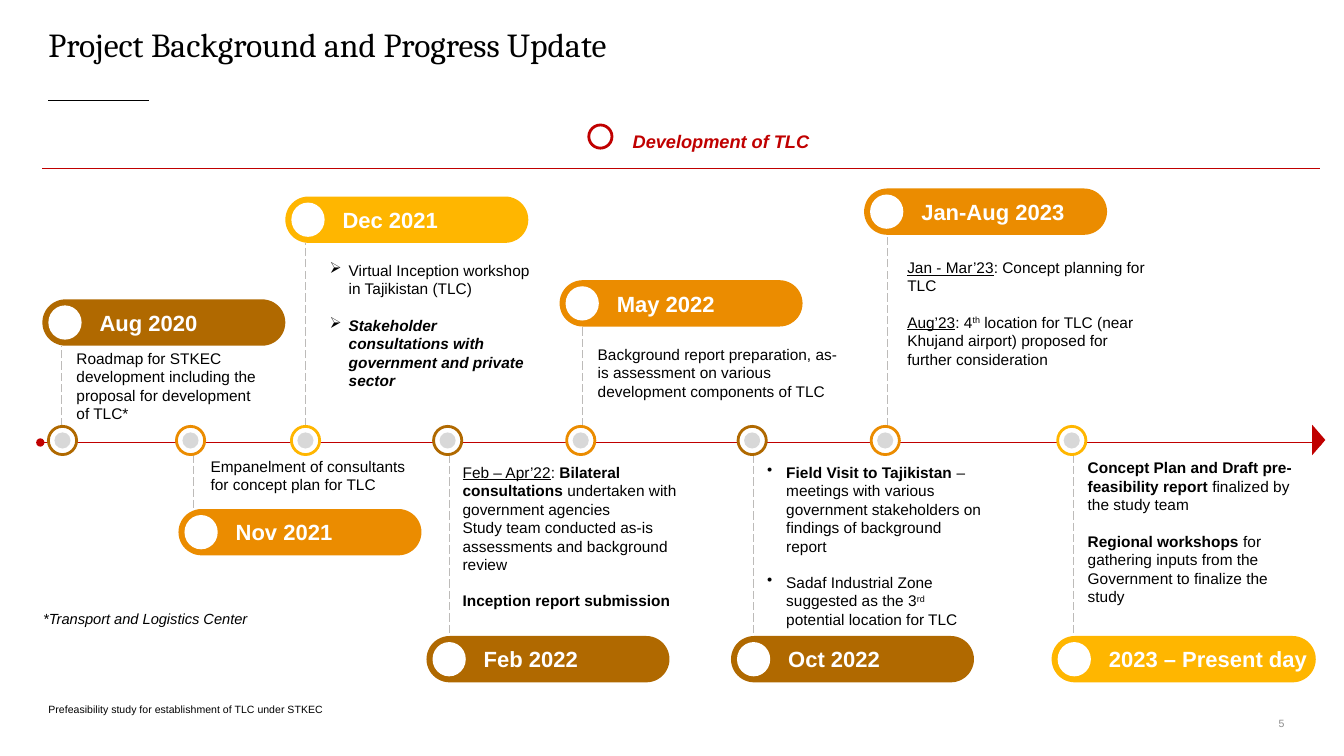
"""Builds the project timeline slide."""
from lxml import etree
from pptx import Presentation
from pptx.dml.color import RGBColor
from pptx.enum.dml import MSO_LINE
from pptx.enum.shapes import MSO_CONNECTOR, MSO_SHAPE
from pptx.enum.text import MSO_ANCHOR, PP_ALIGN
from pptx.oxml.ns import qn
from pptx.util import Inches, Pt

PILL, DISC, TRIANGLE = MSO_SHAPE.ROUNDED_RECTANGLE, MSO_SHAPE.OVAL, MSO_SHAPE.ISOSCELES_TRIANGLE
STRAIGHT, DASHED = MSO_CONNECTOR.STRAIGHT, MSO_LINE.LONG_DASH
TOP, MIDDLE, BOTTOM = MSO_ANCHOR.TOP, MSO_ANCHOR.MIDDLE, MSO_ANCHOR.BOTTOM
LEFT, CENTER, RIGHT = PP_ALIGN.LEFT, PP_ALIGN.CENTER, PP_ALIGN.RIGHT

BLACK = RGBColor(0x00, 0x00, 0x00)
WHITE = RGBColor(0xFF, 0xFF, 0xFF)
BROWN = RGBColor(0xB0, 0x69, 0x00)
ORANGE = RGBColor(0xEB, 0x8C, 0x00)
YELLOW = RGBColor(0xFF, 0xB6, 0x00)
RED = RGBColor(0xC0, 0x00, 0x00)
STEM_GREY = RGBColor(0xBD, 0xBB, 0xB9)
CORE_GREY = RGBColor(0xD8, 0xD8, 0xD8)
NUMBER_GREY = RGBColor(0x8C, 0x8C, 0x8C)

COLUMNS, ROWS = 133.3, 75
AXIS_ROW, MARKER_ROW = 43.9, 42.3
PILL_WIDTH, PILL_HEIGHT, MARKER_SIZE = 24.1, 4.6, 2.8

# label, colour, (pill column, row, width), marker column, stem column
EVENTS = [
    ("Aug 2020", BROWN, (4.2, 29.7, PILL_WIDTH), 4.8, 6.1),
    ("Nov 2021", ORANGE, (17.7, 50.5, PILL_WIDTH), 17.5, 19.2),
    ("Dec 2021", YELLOW, (28.3, 19.5, PILL_WIDTH), 28.9, 30.3),
    ("Feb 2022", BROWN, (42.3, 63.1, PILL_WIDTH), 43, 44.6),
    ("May 2022", ORANGE, (55.5, 27.8, PILL_WIDTH), 56.2, 57.8),
    ("Oct 2022", BROWN, (72.5, 63.1, PILL_WIDTH), 73.2, 74.7),
    ("Jan-Aug 2023", ORANGE, (85.7, 18.7, PILL_WIDTH), 86.4, 88),
    ("2023 – Present day", YELLOW, (104.3, 63.1, 26.2), 104.9, 106.5),
]

# place, bullet, paragraphs of (gap before, spans of (text, style letters))
NOTES = [
    ((6.6, 34.6, 20.9, 8.2), None, [
        (0, [("Roadmap for STKEC development including the proposal for development of TLC*", "")])]),
    ((19.9, 45.3, 21.7, 6.9), None, [
        (0, [("Empanelment of consultants for concept plan for TLC", "")])]),
    ((31.7, 25.9, 22.1, 16.6), "➢", [
        (0, [("Virtual Inception workshop in Tajikistan (TLC)", "")]),
        (1, [("Stakeholder consultations with government and private sector", "bi")])]),
    ((44.9, 45.9, 23.3, 15.4), None, [
        (0, [("Feb – Apr’22", "u"), (":", ""), (" Bilateral consultations ", "b"),
             ("undertaken with government agencies", "")]),
        (0, [("Study team conducted as-is assessments and background review", "")]),
        (1, [("Inception report submission", "b")])]),
    ((58.3, 34.2, 26.1, 8.4), None, [
        (0, [("Background report preparation, as-is assessment on various "
              "development components of TLC", "")])]),
    ((75.1, 45.9, 23.3, 15.4), "•", [
        (0, [("Field Visit to Tajikistan ", "b"),
             ("– meetings with various government stakeholders on findings of background report", "")]),
        (1, [("Sadaf Industrial Zone suggested as the 3", ""), ("rd", "^"),
             (" potential location for TLC", "")])]),
    ((89, 25.6, 26.2, 16.1), None, [
        (0, [("Jan - Mar’23", "u"), (": Concept planning for TLC", "")]),
        (1, [("Aug’23", "u"), (": 4", ""), ("th", "^"),
             (" location for TLC (near Khujand airport) proposed for further consideration", "")])]),
    ((106.9, 45.5, 23, 17), None, [
        (0, [("Concept Plan and Draft pre-feasibility report ", "b"), ("finalized by the study team", "")]),
        (1, [("Regional workshops ", "b"),
             ("for gathering inputs from the Government to finalize the study", "")])]),
]


class TimelinePage:
    """Holds the text style and the current slide, measured on a grid of tenths of an inch."""

    font_name = "Arial"
    note_size = 11
    note_gap = Pt(12.65)

    def __init__(self, deck):
        deck.slide_width, deck.slide_height = self.grid(COLUMNS, ROWS)
        self.page = deck.slides.add_slide(deck.slide_layouts[6])

    def grid(self, *cells):
        return [Inches(cell / 10) for cell in cells]

    def style(self, font, size, color, letters="", name=None):
        font.name, font.size = name or self.font_name, Pt(size)
        font.color.rgb = color
        font.bold, font.italic, font.underline = "b" in letters, "i" in letters, "u" in letters

    def frame(self, shape, anchor, insets):
        frame = shape.text_frame
        frame.word_wrap, frame.vertical_anchor = True, anchor
        (frame.margin_left, frame.margin_top,
         frame.margin_right, frame.margin_bottom) = self.grid(*insets)
        return frame

    def shape(self, kind, place, fill, outline=None):
        shape = self.page.shapes.add_shape(kind, *self.grid(*place))
        shape.shadow.inherit = False
        shape.fill.solid()
        shape.fill.fore_color.rgb = fill
        if outline is None:
            shape.line.fill.background()
        else:
            shape.line.color.rgb, shape.line.width = outline, Pt(2)
        return shape

    def line(self, start, end, color, width=0.75, dash=None, dots=False):
        line = self.page.shapes.add_connector(STRAIGHT, *self.grid(*start, *end))
        line.line.color.rgb, line.line.width = color, Pt(width)
        if dash is not None:
            line.line.dash_style = dash
        if dots:
            outline = line.line._get_or_add_ln()
            for tip in ("a:headEnd", "a:tailEnd"):
                etree.SubElement(outline, qn(tip), type="oval")
        etree.SubElement(line._element.spPr, qn("a:effectLst"))

    def label(self, text, place, size, color=BLACK, letters="", anchor=TOP,
              align=LEFT, insets=(0, 0, 0, 0), name=None, spacing=None):
        box = self.page.shapes.add_textbox(*self.grid(*place))
        frame = self.frame(box, anchor, insets)
        frame.text = text
        para = frame.paragraphs[0]
        para.alignment, para.line_spacing = align, spacing
        self.style(para.runs[0].font, size, color, letters, name)

    def bullet(self, para, mark):
        properties = para._p.get_or_add_pPr()
        indent = Inches(0.19)
        properties.set("marL", str(indent))
        properties.set("indent", str(-indent))
        tint = etree.SubElement(properties, qn("a:buClr"))
        etree.SubElement(tint, qn("a:srgbClr"), val=str(BLACK))
        etree.SubElement(properties, qn("a:buChar"), char=mark)

    def note(self, place, mark, paragraphs):
        box = self.page.shapes.add_textbox(*self.grid(*place))
        frame = self.frame(box, TOP, (1, 0, 1, 0))
        for index, (gap, spans) in enumerate(paragraphs):
            para = frame.add_paragraph() if index else frame.paragraphs[0]
            if mark:
                self.bullet(para, mark)
            if gap:
                para.space_before = self.note_gap
            for text, letters in spans:
                span = para.add_run()
                span.text = text
                self.style(span.font, self.note_size, BLACK, letters)
                if "^" in letters:
                    span._r.get_or_add_rPr().set("baseline", "30000")

    def event(self, text, color, pill_place, marker_column, stem_column):
        column, row, width = pill_place
        above = row < AXIS_ROW
        stem_start = MARKER_ROW if above else MARKER_ROW + MARKER_SIZE
        stem_end = row + PILL_HEIGHT if above else row
        self.line((stem_column, stem_start), (stem_column, stem_end), STEM_GREY, dash=DASHED)
        pill = self.shape(PILL, (column, row, width, PILL_HEIGHT), color)
        pill.adjustments[0] = 0.5
        frame = self.frame(pill, MIDDLE, (5, 0, 0, 0))
        frame.text = text
        frame.paragraphs[0].alignment = LEFT
        self.style(frame.paragraphs[0].runs[0].font, 15.7, WHITE, "b")
        self.shape(DISC, (column + 0.6, row + 0.6, 3.3, 3.4), WHITE)
        self.shape(DISC, (marker_column, MARKER_ROW, MARKER_SIZE, MARKER_SIZE), WHITE, color)
        self.shape(DISC, (marker_column + 0.6, MARKER_ROW + 0.6, 1.6, 1.6), CORE_GREY)


def main():
    deck = Presentation()
    timeline = TimelinePage(deck)
    timeline.label("Project Background and Progress Update", (4.8, 1.3, 123.6, 6.7), 24,
                   anchor=MIDDLE, name="Cambria", spacing=0.85)
    timeline.line((4.8, 10), (14.8, 10), BLACK, width=1)
    timeline.line((4.2, 16.7), (130.9, 16.7), RED)
    timeline.label("Development of TLC", (20.2, 12.5, 102.6, 3), 13, RED, "bi",
                   MIDDLE, CENTER, (1, 1, 1, 1))
    timeline.shape(DISC, (58.4, 12.4, 2.3, 2.3), WHITE, RED)
    timeline.line((4, AXIS_ROW), (130.7, AXIS_ROW), RED, dots=True)
    for event in EVENTS:
        timeline.event(*event)
    for note in NOTES:
        timeline.note(*note)
    timeline.shape(TRIANGLE, (129.3, 43, 3, 1.3), RED).rotation = 90
    timeline.label("*Transport and Logistics Center", (3.3, 60.5, 42.3, 2.1), 10.5,
                   letters="i", insets=(1, 0, 1, 0))
    timeline.label("Prefeasibility study for establishment of TLC under STKEC",
                   (4.8, 69.5, 59.9, 1.5), 7.5, anchor=BOTTOM)
    timeline.label("5", (109.2, 71, 19.3, 1.5), 7.5, NUMBER_GREY, anchor=MIDDLE,
                   align=RIGHT, insets=(1.1, 0.6, 1.1, 0.6))
    deck.save("out.pptx")


if __name__ == "__main__":
    main()
